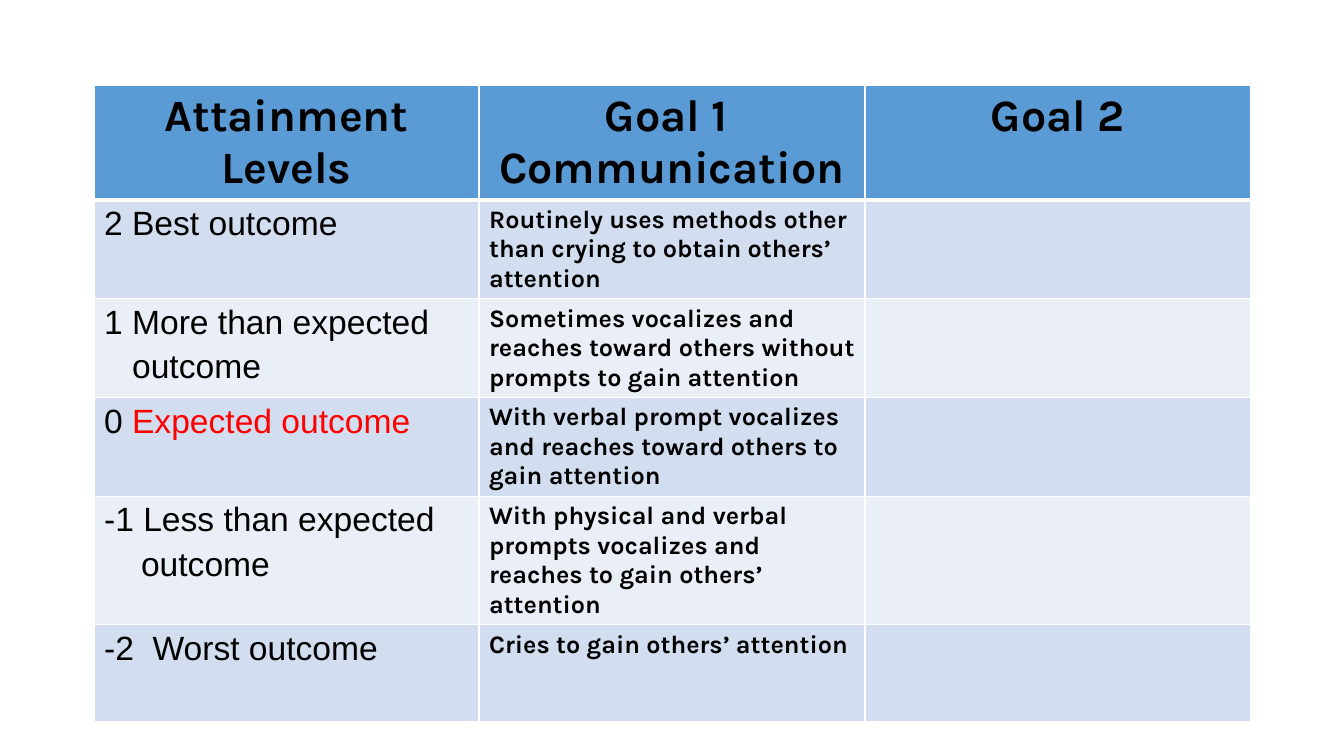
"""Build a goal attainment scaling table slide."""
from dataclasses import dataclass

from lxml import etree
from pptx import Presentation
from pptx.dml.color import RGBColor
from pptx.enum.text import PP_ALIGN
from pptx.oxml.ns import qn
from pptx.util import Emu, Pt

CENTER, LEFT = PP_ALIGN.CENTER, PP_ALIGN.LEFT
SLIDE_W, SLIDE_H = 1344, 756
TABLE_X, TABLE_Y = 94, 85
COLUMN_WIDTHS = (385, 386, 386)
ROW_HEIGHT = 97
EMU_PER_PX = 12192000 / SLIDE_W


@dataclass(frozen=True)
class Theme:
    """Colours, border widths and spacing of the slide."""
    header: str = "5B9BD5"
    bands: tuple[str, str] = ("D2DEEF", "EAEFF7")
    border: str = "FFFFFF"
    text: str = "000000"
    expected: str = "FF0000"
    thin: int = 1
    thick: int = 3
    space_before: int = 20


@dataclass(frozen=True)
class Style:
    """Type style of a kind of cell."""
    font: str
    size: int
    bold: bool
    align: PP_ALIGN = LEFT
    spaced: bool = False


@dataclass(frozen=True)
class Line:
    """One paragraph: an optional lead, its main text and a left indent."""
    text: str
    lead: str = ""
    color: str = Theme.text
    indent: int = 0


@dataclass(frozen=True)
class Level:
    """One attainment level with its description for the first goal."""
    label: tuple[Line, ...]
    goal: str


THEME = Theme()
HEADING = Style("Karla", 32, True, CENTER)
LABEL = Style("Arial", 24, False, spaced=True)
GOAL = Style("Karla", 18, True)

HEADINGS = (
    (Line("Attainment Levels"),),
    (Line("Goal 1 "), Line("Communication")),
    (Line("Goal 2"),),
)
LEVELS = (
    Level((Line("2 Best outcome"),),
          "Routinely uses methods other than crying to obtain others’ attention"),
    Level((Line("1 More than expected"), Line("outcome", indent=28)),
          "Sometimes vocalizes and reaches toward others without prompts to gain attention"),
    Level((Line("Expected outcome", lead="0 ", color=THEME.expected),),
          "With verbal prompt vocalizes and reaches toward others to gain attention"),
    Level((Line("-1 Less than expected"), Line("outcome", indent=37)),
          "With physical and verbal prompts vocalizes and reaches to gain others’ attention"),
    Level((Line("-2  Worst outcome"),), "Cries to gain others’ attention"),
)


def px(value: int) -> Emu:
    """Turn pixels into EMU."""
    return Emu(round(value * EMU_PER_PX))


def add_run(p, text: str, style: Style, color: str) -> None:
    """Add one styled run to a paragraph."""
    r = p.add_run()
    r.text = text
    r.font.name = style.font
    r.font.size = Pt(style.size)
    r.font.bold = style.bold
    r.font.color.rgb = RGBColor.from_string(color)


def write_lines(tf, lines: tuple[Line, ...], style: Style) -> None:
    """Fill a text frame with one paragraph per line."""
    for index, line in enumerate(lines):
        p = tf.add_paragraph() if index else tf.paragraphs[0]
        p.alignment = style.align
        pPr = p._p.get_or_add_pPr()
        if line.indent:
            pPr.set("marL", str(px(line.indent)))
        if style.spaced:
            spacing = etree.SubElement(pPr, qn("a:spcBef"))
            etree.SubElement(spacing, qn("a:spcPct"), val=str(THEME.space_before * 1000))
        if line.lead:
            add_run(p, line.lead, style, THEME.text)
        add_run(p, line.text, style, line.color)


def paint_cell(cell, row: int) -> None:
    """Give a cell its borders and fill according to its row."""
    tcPr = cell._tc.get_or_add_tcPr()
    thick_side = {0: "B", 1: "T"}.get(row)
    for side in "LRTB":
        width = THEME.thick if side == thick_side else THEME.thin
        ln = etree.SubElement(tcPr, qn(f"a:ln{side}"), w=str(Pt(width)))
        fill = etree.SubElement(ln, qn("a:solidFill"))
        etree.SubElement(fill, qn("a:srgbClr"), val=THEME.border)
    color = THEME.bands[(row - 1) % 2] if row else THEME.header
    cell.fill.solid()
    cell.fill.fore_color.rgb = RGBColor.from_string(color)


def add_goal_table(s) -> None:
    """Add the table of attainment levels and goals."""
    rows, cols = len(LEVELS) + 1, len(COLUMN_WIDTHS)
    table = s.shapes.add_table(rows, cols, px(TABLE_X), px(TABLE_Y),
                               px(sum(COLUMN_WIDTHS)), px(ROW_HEIGHT * rows)).table
    for column, width in zip(table.columns, COLUMN_WIDTHS):
        column.width = px(width)
    for row_index, row in enumerate(table.rows):
        row.height = px(ROW_HEIGHT)
        for cell in row.cells:
            paint_cell(cell, row_index)
    for col, heading in enumerate(HEADINGS):
        write_lines(table.cell(0, col).text_frame, heading, HEADING)
    for row_index, level in enumerate(LEVELS, start=1):
        write_lines(table.cell(row_index, 0).text_frame, level.label, LABEL)
        write_lines(table.cell(row_index, 1).text_frame, (Line(level.goal),), GOAL)


def main() -> None:
    """Create the presentation and save it."""
    prs = Presentation()
    prs.slide_width, prs.slide_height = px(SLIDE_W), px(SLIDE_H)
    s = prs.slides.add_slide(prs.slide_layouts[6])
    add_goal_table(s)
    prs.save("out.pptx")


if __name__ == "__main__":
    main()
